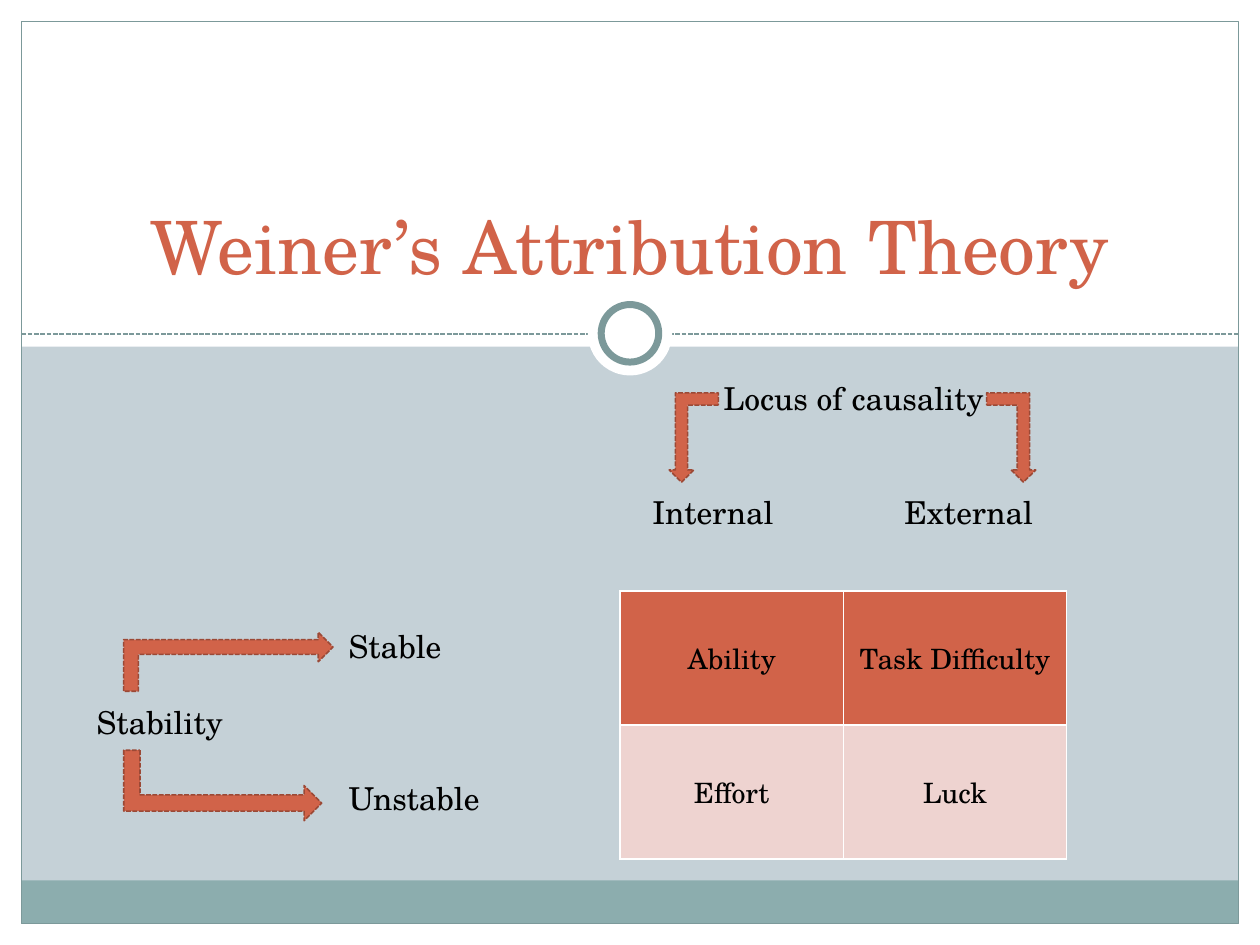
from dataclasses import dataclass
from typing import Optional

import pptx
import pptx.dml.color
import pptx.enum.dml
import pptx.enum.shapes
import pptx.enum.text
import pptx.oxml
import pptx.oxml.ns
import pptx.util
from lxml import etree

Cm, Pt = pptx.util.Cm, pptx.util.Pt
Preset = pptx.enum.shapes.MSO_SHAPE
Align = pptx.enum.text.PP_ALIGN
Anchor = pptx.enum.text.MSO_ANCHOR
qn = pptx.oxml.ns.qn

FONT = "TeX Gyre Schola"
WHITE, BLACK = "FFFFFF", "000000"
ORANGE, PINK, RUST = "D16349", "EED3D0", "9B4936"
TEAL, BAND_TEAL, BACKGROUND = "7C999A", "8CADAE", "C5D1D7"
WIDTH, HEIGHT, MARGIN = 25.4, 19.05, 0.43
LINE_GAP = 21.7


@dataclass
class Box:
    """Position and size in centimetres."""
    left: float
    top: float
    width: float
    height: float

    def lengths(self) -> tuple:
        return Cm(self.left), Cm(self.top), Cm(self.width), Cm(self.height)


@dataclass
class Panel:
    box: Box
    fill: Optional[str] = None
    line: Optional[str] = None
    weight: float = 0.75
    preset: int = Preset.RECTANGLE


@dataclass
class BentArrow:
    box: Box
    rotation: int
    flipped: bool = False
    shaft: float = 0.25


@dataclass
class Label:
    text: str
    size: float = 18
    color: str = BLACK
    align: int = Align.LEFT
    gap_lines: int = 0
    indent: float = 0
    tab: float = 0


PANELS = [
    Panel(Box(0, HEIGHT - MARGIN, WIDTH, MARGIN), WHITE),
    Panel(Box(WIDTH - MARGIN, 0, MARGIN, HEIGHT), WHITE),
    Panel(Box(0, 0, MARGIN, HEIGHT), WHITE),
    Panel(Box(0, 0, WIDTH, 6.99), WHITE),
    Panel(Box(MARGIN, 17.75, WIDTH - 2 * MARGIN, 0.87), BAND_TEAL),
]
FRAME_AND_RING = [
    Panel(Box(MARGIN, MARGIN, WIDTH - 2 * MARGIN, HEIGHT - 2 * MARGIN), line=TEAL),
    Panel(Box(11.85, 5.87, 1.7, 1.7), WHITE, preset=Preset.OVAL),
    Panel(Box(12.12, 6.14, 1.16, 1.16), WHITE, TEAL, 4, Preset.OVAL),
]
TITLE = [Label("Weiner’s Attribution Theory", 42, ORANGE, Align.CENTER)]
STABILITY = [
    Label("Stable", indent=5.08),
    Label("Stability", gap_lines=1),
    Label("Unstable", gap_lines=1, indent=5.08),
]
LOCUS = [
    Label("Locus of causality", align=Align.CENTER),
    Label("Internal\tExternal", gap_lines=2, tab=5.08),
]
CAUSES = [("Ability", "Task Difficulty"), ("Effort", "Luck")]
ROW_FILLS = [ORANGE, PINK]
ARROWS = [
    BentArrow(Box(13.49, 7.92, 0.99, 1.8), 180),
    BentArrow(Box(4.01, 11.23, 1.19, 4.22), 90, flipped=True),
    BentArrow(Box(3.78, 13.84, 1.42, 3.99), 90, shaft=0.23),
    BentArrow(Box(19.89, 7.92, 0.99, 1.8), 180, flipped=True),
]


def rgb(color: str) -> pptx.dml.color.RGBColor:
    return pptx.dml.color.RGBColor.from_string(color)


def set_fill(fill, color: Optional[str]) -> None:
    if color is None:
        fill.background()
    else:
        fill.solid()
        fill.fore_color.rgb = rgb(color)


def set_line(line, color: Optional[str], weight: float, dashed: bool = False) -> None:
    set_fill(line.fill, color)
    if color is not None:
        line.width = Pt(weight)
    if dashed:
        line.dash_style = pptx.enum.dml.MSO_LINE.SQUARE_DOT


def draw_panel(slide, panel: Panel):
    shape = slide.shapes.add_shape(panel.preset, *panel.box.lengths())
    shape.shadow.inherit = False
    set_fill(shape.fill, panel.fill)
    set_line(shape.line, panel.line, panel.weight)
    return shape


def draw_divider(slide, y: float) -> None:
    divider = slide.shapes.add_connector(
        pptx.enum.shapes.MSO_CONNECTOR.STRAIGHT,
        Cm(MARGIN), Cm(y), Cm(WIDTH - MARGIN), Cm(y))
    set_line(divider.line, TEAL, 0.9, dashed=True)
    etree.SubElement(divider._element.spPr, qn("a:effectLst"))


def draw_arrow(slide, arrow: BentArrow) -> None:
    shape = draw_panel(
        slide, Panel(arrow.box, ORANGE, RUST, 0.9, Preset.BENT_UP_ARROW))
    set_line(shape.line, RUST, 0.9, dashed=True)
    shape.adjustments[0] = arrow.shaft
    shape.rotation = arrow.rotation
    if arrow.flipped:
        shape._element.spPr.find(qn("a:xfrm")).set("flipH", "1")


def write_paragraph(paragraph, label: Label) -> None:
    paragraph.text = label.text
    paragraph.alignment = label.align
    if label.gap_lines:
        paragraph.space_before = Pt(label.gap_lines * LINE_GAP)
    properties = paragraph._p.get_or_add_pPr()
    if label.indent:
        properties.set("marL", str(Cm(label.indent)))
    if label.tab:
        tabs = etree.SubElement(properties, qn("a:tabLst"))
        etree.SubElement(tabs, qn("a:tab"), pos=str(Cm(label.tab)), algn="l")
    for run in paragraph.runs:
        run.font.name = FONT
        run.font.size = Pt(label.size)
        run.font.color.rgb = rgb(label.color)


def draw_labels(slide, box: Box, labels: list[Label], anchor=Anchor.TOP) -> None:
    frame = slide.shapes.add_textbox(*box.lengths()).text_frame
    frame.word_wrap = True
    frame.vertical_anchor = anchor
    for index, label in enumerate(labels):
        paragraph = frame.add_paragraph() if index else frame.paragraphs[0]
        write_paragraph(paragraph, label)


def border_cell(cell, color: str, weight: float) -> None:
    properties = cell._tc.get_or_add_tcPr()
    for index, side in enumerate(("a:lnL", "a:lnR", "a:lnT", "a:lnB")):
        border = etree.Element(qn(side), w=str(Pt(weight)))
        fill = etree.SubElement(border, qn("a:solidFill"))
        etree.SubElement(fill, qn("a:srgbClr"), val=color)
        properties.insert(index, border)


def draw_causes(slide, box: Box) -> None:
    table = slide.shapes.add_table(2, 2, *box.lengths()).table
    for row, (causes, fill) in enumerate(zip(CAUSES, ROW_FILLS)):
        for column, cause in enumerate(causes):
            cell = table.cell(row, column)
            set_fill(cell.fill, fill)
            border_cell(cell, WHITE, 1)
            cell.vertical_anchor = Anchor.MIDDLE
            write_paragraph(cell.text_frame.paragraphs[0],
                            Label(cause, 16, align=Align.CENTER))


def main() -> None:
    deck = pptx.Presentation()
    deck.slide_width, deck.slide_height = Cm(WIDTH), Cm(HEIGHT)
    slide = deck.slides.add_slide(deck.slide_layouts[6])
    set_fill(slide.background.fill, BACKGROUND)
    for panel in PANELS:
        draw_panel(slide, panel)
    draw_divider(slide, 6.73)
    for panel in FRAME_AND_RING:
        draw_panel(slide, panel)
    draw_labels(slide, Box(1.9, 1.07, 21.6, 4.88), TITLE, Anchor.BOTTOM)
    draw_causes(slide, Box(12.5, 11.91, 9, 5.41))
    draw_labels(slide, Box(1.7, 12.52, 9.6, 4.11), STABILITY)
    draw_labels(slide, Box(12.9, 7.52, 8.61, 3.33), LOCUS)
    for arrow in ARROWS:
        draw_arrow(slide, arrow)
    deck.save("out.pptx")


if __name__ == "__main__":
    main()
